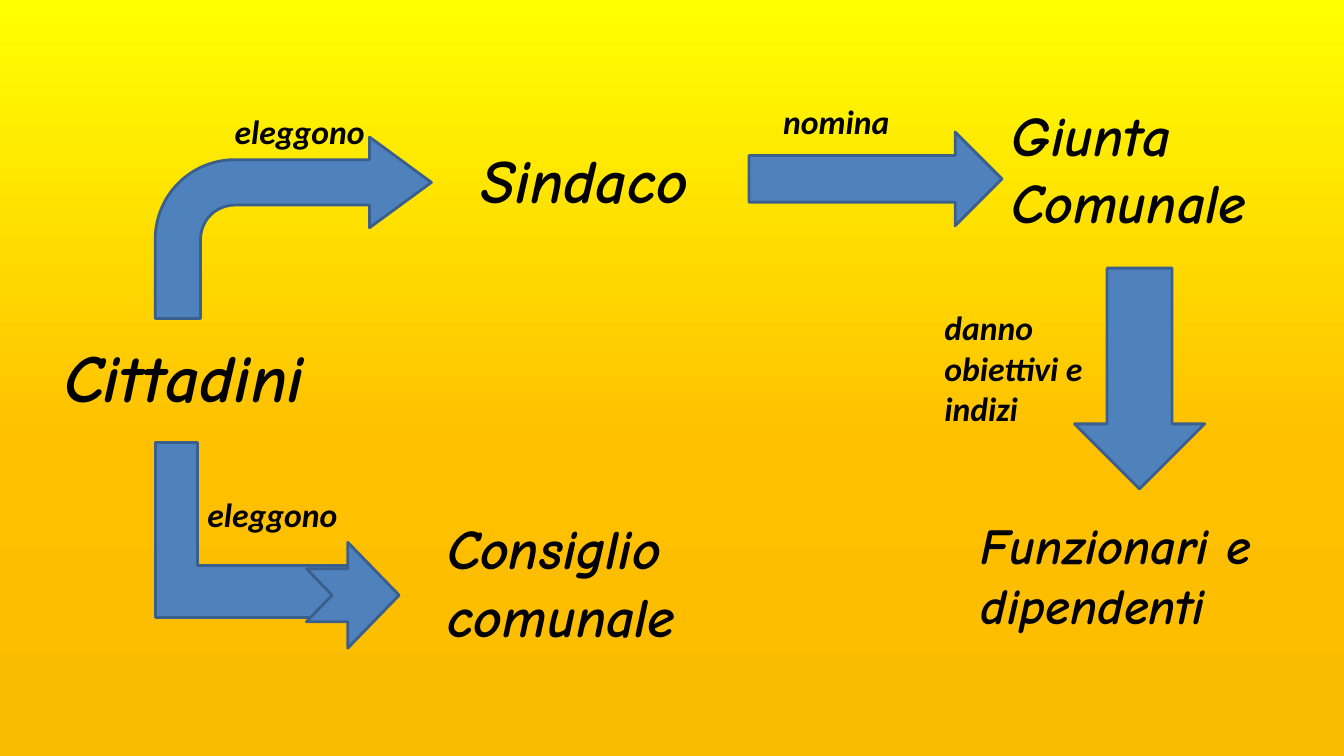
import pptx
import pptx.dml.color
import pptx.enum.shapes
import pptx.enum.text
import pptx.oxml.ns
import pptx.util
import lxml.etree

SHAPES = pptx.enum.shapes.MSO_SHAPE
SLIDE_WIDTH, SLIDE_HEIGHT = 13.33, 7.5
GRADIENT = [(0, "FFFF00"), (59, "FFC000"), (100, "FABC00")]
ARROW_FILL, ARROW_LINE, TEXT_COLOR = "4F81BD", "3A5F8C", "000000"
ROLE_FONT, ACTION_FONT, ACTION_SIZE = "Comic Neue", "Calibri", 24

ELBOW = (11.55, 58.53, 14.55, 23.2)
ELBOW_STEM, ELBOW_FOOT = 0.24, 0.3
ARROWS = [
    (SHAPES.BENT_ARROW, (11.55, 18.13, 20.55, 24), (0.25, 0.25, 0.341, 0.438)),
    (SHAPES.RIGHT_ARROW, (55.73, 17.47, 18.83, 12.4), ()),
    (SHAPES.DOWN_ARROW, (79.95, 35.47, 9.68, 29.2), ()),
    (SHAPES.NOTCHED_RIGHT_ARROW, (22.8, 71.73, 6.9, 14), (0.5, 0.554)),
]
ROLES = [
    (["Cittadini"], (4.05, 43.73, 22.05, 12.13), 48, False),
    (["Sindaco"], (35.1, 18.13, 18.53, 11.2), 44, False),
    (["Giunta", "Comunale"], (74.55, 12.67, 19.88, 19.33), 40, False),
    (["Funzionari e", "dipendenti"], (72.23, 67.33, 25.43, 17.47), 36, True),
    (["Consiglio comunale"], (32.55, 67.33, 21.08, 19.33), 40, True),
]
ACTIONS = [
    (["eleggono"], (16.73, 14, 12.15, 6.67)),
    (["nomina"], (57.53, 12.67, 10.43, 6.67)),
    (["danno", "obiettivi e indizi"], (69.53, 40, 12.15, 17.47)),
    (["eleggono"], (14.7, 64.67, 11.4, 6.67)),
]


def color(value):
    return pptx.dml.color.RGBColor.from_string(value)


def place(shares):
    sides = (SLIDE_WIDTH, SLIDE_HEIGHT) * 2
    return [pptx.util.Inches(share * side / 100) for share, side in zip(shares, sides)]


def paint_background(slide):
    fill = slide.background.fill
    fill.gradient()
    fill.gradient_angle = 270
    qn = pptx.oxml.ns.qn
    stops = next(slide.element.iter(qn("a:gsLst")))
    for stop in list(stops):
        stops.remove(stop)
    for percent, value in GRADIENT:
        stop = lxml.etree.SubElement(stops, qn("a:gs"), pos=str(percent * 1000))
        lxml.etree.SubElement(stop, qn("a:srgbClr"), val=value)


def style_arrow(shape):
    shape.shadow.inherit = False
    shape.fill.solid()
    shape.fill.fore_color.rgb = color(ARROW_FILL)
    shape.line.color.rgb = color(ARROW_LINE)
    shape.line.width = pptx.util.Pt(2)


def add_elbow(slide):
    left, top, width, height = place(ELBOW)
    right, bottom = left + width, top + height
    unit = min(width, height)
    stem_right = left + round(unit * ELBOW_STEM)
    foot_top = bottom - round(unit * ELBOW_FOOT)
    builder = slide.shapes.build_freeform(left, top)
    builder.add_line_segments([
        (stem_right, top), (stem_right, foot_top), (right, foot_top),
        (right, bottom), (left, bottom),
    ])
    style_arrow(builder.convert_to_shape())


def add_arrow(slide, kind, shares, adjustments):
    shape = slide.shapes.add_shape(kind, *place(shares))
    for index, value in enumerate(adjustments):
        shape.adjustments[index] = value
    style_arrow(shape)


def add_label(slide, lines, shares, font_name, size, wrap):
    frame = slide.shapes.add_textbox(*place(shares)).text_frame
    frame.word_wrap = wrap
    frame.auto_size = pptx.enum.text.MSO_AUTO_SIZE.SHAPE_TO_FIT_TEXT
    for index, line in enumerate(lines):
        paragraph = frame.add_paragraph() if index else frame.paragraphs[0]
        run = paragraph.add_run()
        run.text = line
        run.font.name = font_name
        run.font.size = pptx.util.Pt(size)
        run.font.bold = run.font.italic = True
        run.font.color.rgb = color(TEXT_COLOR)


def main():
    presentation = pptx.Presentation()
    presentation.slide_width = pptx.util.Inches(SLIDE_WIDTH)
    presentation.slide_height = pptx.util.Inches(SLIDE_HEIGHT)
    slide = presentation.slides.add_slide(presentation.slide_layouts[6])
    paint_background(slide)
    add_elbow(slide)
    for kind, shares, adjustments in ARROWS:
        add_arrow(slide, kind, shares, adjustments)
    for lines, shares, size, wrap in ROLES:
        add_label(slide, lines, shares, ROLE_FONT, size, wrap)
    for lines, shares in ACTIONS:
        add_label(slide, lines, shares, ACTION_FONT, ACTION_SIZE, True)
    presentation.save("out.pptx")


if __name__ == "__main__":
    main()
